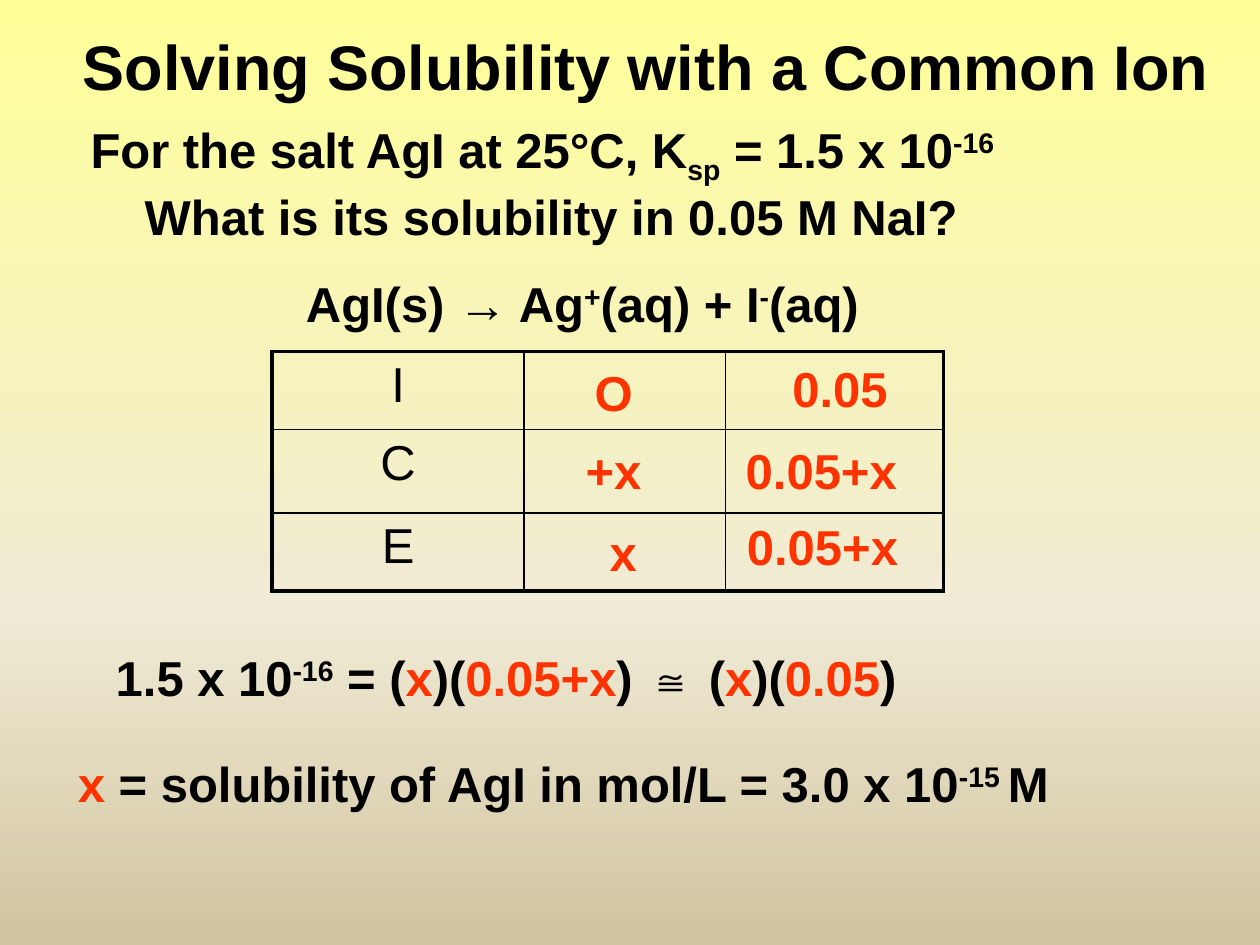
from copy import deepcopy

from pptx import Presentation
from pptx.dml.color import RGBColor
from pptx.enum.text import MSO_ANCHOR, MSO_AUTO_SIZE, PP_ALIGN
from pptx.oxml import parse_xml
from pptx.oxml.ns import nsdecls
from pptx.util import Inches, Pt

BLACK = RGBColor(0x00, 0x00, 0x00)
RED = RGBColor(0xFF, 0x33, 0x00)
YELLOW = RGBColor(0xFF, 0xFF, 0x99)
CREAM = RGBColor(0xF0, 0xEB, 0xD5)
TAN = RGBColor(0xD1, 0xC3, 0x9F)

BODY = {"name": "Arial", "size": Pt(28), "bold": True}
TITLE = {**BODY, "size": Pt(36)}
LABEL = {**BODY, "bold": False}
SUPER, SUB = 30, -25


def add_runs(paragraph, runs, font_format=BODY):
    for text, color, baseline in runs:
        run = paragraph.add_run()
        run.text = text
        for name, value in font_format.items():
            setattr(run.font, name, value)
        run.font.color.rgb = color
        if baseline:
            run._r.get_or_add_rPr().set("baseline", str(baseline * 1000))


def add_text(left, top, width, height, lines, wrap=False, font_format=BODY):
    box = slide.shapes.add_textbox(Inches(left), Inches(top), Inches(width), Inches(height))
    frame = box.text_frame
    frame.word_wrap = wrap
    frame.auto_size = MSO_AUTO_SIZE.NONE if font_format is TITLE else MSO_AUTO_SIZE.SHAPE_TO_FIT_TEXT
    for index, runs in enumerate(lines):
        paragraph = frame.add_paragraph() if index else frame.paragraphs[0]
        add_runs(paragraph, runs, font_format)
    return frame


presentation = Presentation()
presentation.slide_width = Inches(10)
presentation.slide_height = Inches(7.5)
slide = presentation.slides.add_slide(presentation.slide_layouts[6])

fill = slide.background.fill
fill.gradient()
fill.gradient_angle = 270
stop_list = slide._element.xpath(".//p:bg//a:gsLst")[0]
stop_list.append(deepcopy(stop_list[-1]))
for stop, position, color in zip(fill.gradient_stops, (0, 0.65, 1), (YELLOW, CREAM, TAN)):
    stop.position = position
    stop.color.rgb = color

title = add_text(0.26, 0, 9.74, 1.03, [[("Solving Solubility with a Common Ion", BLACK, 0)]], True, TITLE)
title.vertical_anchor = MSO_ANCHOR.MIDDLE
title.paragraphs[0].alignment = PP_ALIGN.CENTER

question = add_text(0.62, 0.9, 9.01, 1.03, [
    [("For the salt AgI at 25°C, K", BLACK, 0), ("sp", BLACK, SUB),
     (" = 1.5 x 10", BLACK, 0), ("-16", BLACK, SUPER)],
    [("What is its solubility in 0.05 M NaI?", BLACK, 0)],
], True)
question.paragraphs[1]._p.get_or_add_pPr().set("marL", str(Inches(0.43)))

add_text(2.33, 2.12, 4.67, 0.57, [[
    ("AgI(s) → Ag", BLACK, 0), ("+", BLACK, SUPER), ("(aq) + I", BLACK, 0),
    ("-", BLACK, SUPER), ("(aq)", BLACK, 0),
]])

column_widths = (2, 1.6, 1.73)
row_heights = (0.62, 0.66, 0.62)
table = slide.shapes.add_table(
    3, 3, Inches(2.16), Inches(2.79), Inches(sum(column_widths)), Inches(sum(row_heights))
).table
table.first_row = table.horz_banding = False
for column, width in zip(table.columns, column_widths):
    column.width = Inches(width)
for row_index, (label, height) in enumerate(zip("ICE", row_heights)):
    table.rows[row_index].height = Inches(height)
    for column_index in range(3):
        cell = table.cell(row_index, column_index)
        cell.fill.background()
        outer_sides = {"L": column_index == 0, "R": column_index == 2,
                       "T": row_index == 0, "B": row_index == 2}
        for order, (side, outer) in enumerate(outer_sides.items()):
            border = parse_xml(
                f'<a:ln{side} {nsdecls("a")} w="{Pt(2.25 if outer else 1)}">'
                f'<a:solidFill><a:srgbClr val="{BLACK}"/></a:solidFill></a:ln{side}>'
            )
            cell._tc.get_or_add_tcPr().insert(order, border)
    label_paragraph = table.cell(row_index, 0).text_frame.paragraphs[0]
    label_paragraph.alignment = PP_ALIGN.CENTER
    add_runs(label_paragraph, [(label, BLACK, 0)], LABEL)

concentrations = [
    ("0.05", 6.19, 2.8, 0.97),
    ("O", 4.62, 2.83, 0.51),
    ("+x", 4.55, 3.45, 0.67),
    ("0.05+x", 5.82, 3.45, 1.42),
    ("x", 4.74, 4.1, 0.43),
    ("0.05+x", 5.83, 4.05, 1.42),
]
for text, left, top, width in concentrations:
    add_text(left, top, width, 0.57, [[(text, RED, 0)]])

add_text(0.82, 5.09, 8.82, 0.57, [[
    ("1.5 x 10", BLACK, 0), ("-16", BLACK, SUPER), (" = (", BLACK, 0), ("x", RED, 0),
    (")(", BLACK, 0), ("0.05+x", RED, 0), (") ≅ (", BLACK, 0), ("x", RED, 0),
    (")(", BLACK, 0), ("0.05", RED, 0), (")", BLACK, 0),
]], True)

add_text(0.52, 5.93, 8.05, 0.57, [[
    ("x", RED, 0), (" = solubility of AgI in mol/L = 3.0 x 10", BLACK, 0),
    ("-15 ", BLACK, SUPER), ("M", BLACK, 0),
]])

presentation.save("out.pptx")
